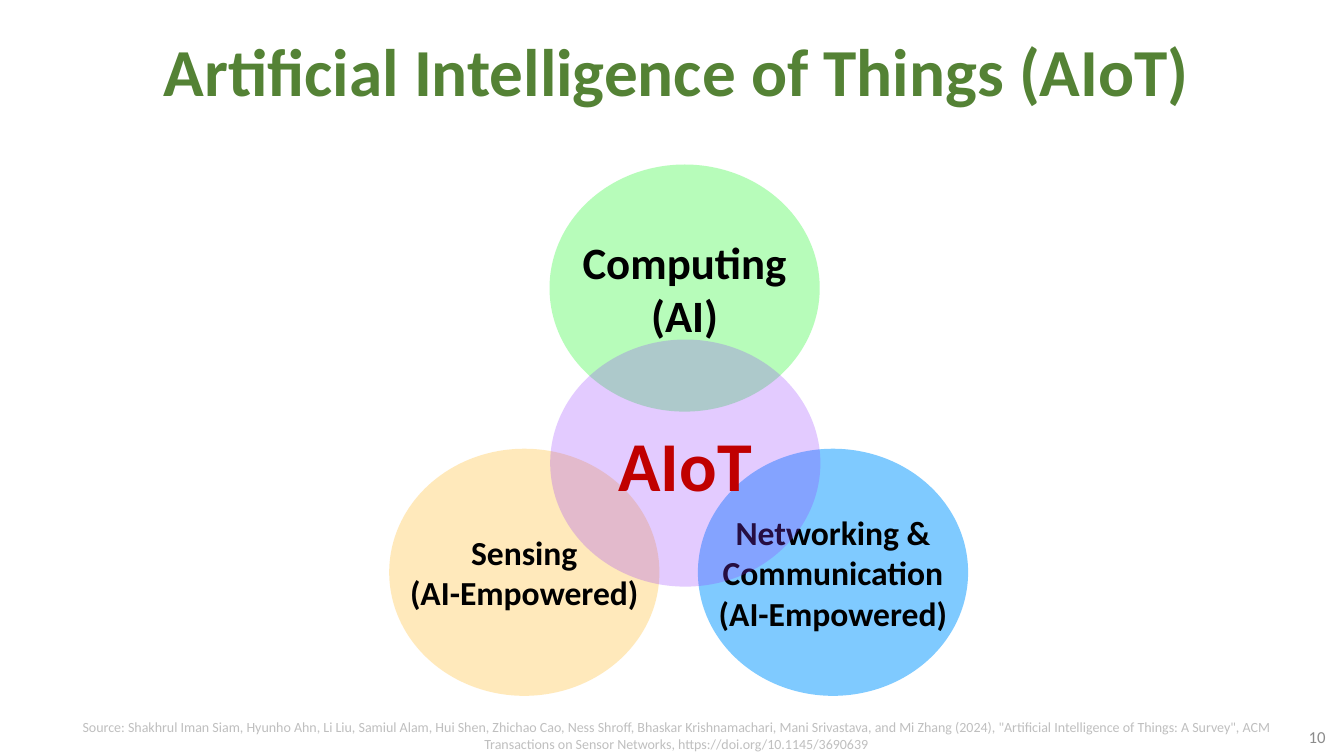
from dataclasses import dataclass

from lxml import etree
from pptx import Presentation
from pptx.dml.color import RGBColor
from pptx.enum import shapes, text
from pptx.oxml.ns import qn
from pptx.util import Pt


@dataclass(frozen=True)
class Theme:
    font: str = "Calibri"
    title: str = "548235"
    number: str = "8C8C8C"
    source: str = "BFBFBF"
    label: str = "000000"
    accent: str = "C00000"
    green: str = "73FB79"
    blue: str = "0096FF"
    amber: str = "FFD579"
    violet: str = "9437FF"
    title_size: int = 48
    centre_size: int = 50
    large_size: int = 32
    label_size: int = 24
    number_size: int = 12
    source_size: int = 10


THEME = Theme()
CIRCLE_WIDTH, CIRCLE_HEIGHT = 193, 176.5

TITLE = "Artificial Intelligence of Things (AIoT)"
SOURCE = (
    "Source: Shakhrul Iman Siam, Hyunho Ahn, Li Liu, Samiul Alam, Hui Shen, "
    "Zhichao Cao, Ness Shroff, Bhaskar Krishnamachari, Mani Srivastava, and "
    'Mi Zhang (2024), "Artificial Intelligence of Things: A Survey", ACM '
    "Transactions on Sensor Networks, https://doi.org/10.1145/3690639"
)


def write(frame, content, size, color, bold=False, align=text.PP_ALIGN.CENTER):
    """Fill a frame: newlines part paragraphs, vertical tabs break lines."""
    frame.text = content
    for para in frame.paragraphs:
        para.alignment = align
        para.font.name = THEME.font
        para.font.size = Pt(size)
        para.font.bold = bold
        para.font.color.rgb = RGBColor.from_string(color)


def add_title(page, content):
    title = page.shapes.title
    title.left, title.top, title.width, title.height = Pt(42), Pt(6.5), Pt(883), Pt(87)
    frame = title.text_frame
    frame.auto_size = text.MSO_AUTO_SIZE.NONE
    frame.vertical_anchor = text.MSO_ANCHOR.MIDDLE
    write(frame, content, THEME.title_size, THEME.title, bold=True)


def add_note(page, left, top, width, height, anchor, content, **style):
    box = page.shapes.add_textbox(Pt(left), Pt(top), Pt(width), Pt(height))
    box.text_frame.word_wrap = True
    box.text_frame.vertical_anchor = anchor
    write(box.text_frame, content, **style)


def add_circle(page, left, top, fill, opacity, content, size, color=THEME.label):
    """Draw a translucent labelled ellipse; opacity is a percentage."""
    circle = page.shapes.add_shape(
        shapes.MSO_SHAPE.OVAL, Pt(left), Pt(top), Pt(CIRCLE_WIDTH), Pt(CIRCLE_HEIGHT)
    )
    circle.shadow.inherit = False
    circle.line.fill.background()
    circle.fill.solid()
    circle.fill.fore_color.rgb = RGBColor.from_string(fill)
    tint = circle.fill._xPr.find(qn("a:solidFill")).find(qn("a:srgbClr"))
    etree.SubElement(tint, qn("a:alpha")).set("val", str(opacity * 1000))
    frame = circle.text_frame
    frame.word_wrap = False
    frame.margin_left = frame.margin_right = 0
    frame.vertical_anchor = text.MSO_ANCHOR.MIDDLE
    write(frame, content, size, color, bold=True)


def main():
    deck = Presentation()
    deck.slide_width, deck.slide_height = Pt(960), Pt(540)
    page = deck.slides.add_slide(deck.slide_layouts.get_by_name("Title Only"))

    add_title(page, TITLE)
    add_note(page, 878.5, 517, 75.5, 18.5, text.MSO_ANCHOR.MIDDLE, "10",
             size=THEME.number_size, color=THEME.number, align=text.PP_ALIGN.RIGHT)
    add_note(page, 49.5, 510, 867, 31.5, text.MSO_ANCHOR.TOP, SOURCE,
             size=THEME.source_size, color=THEME.source)

    add_circle(page, 392.5, 117.5, THEME.green, 51, "Computing\n(AI)", THEME.large_size)
    add_circle(page, 498.5, 320.5, THEME.blue, 50,
               "Networking &\vCommunication\n(AI-Empowered)", THEME.label_size)
    add_circle(page, 278, 320.5, THEME.amber, 50,
               "Sensing\n(AI-Empowered)", THEME.label_size)
    add_circle(page, 393, 242.5, THEME.violet, 26, "AIoT",
               THEME.centre_size, THEME.accent)

    deck.save("out.pptx")


if __name__ == "__main__":
    main()
